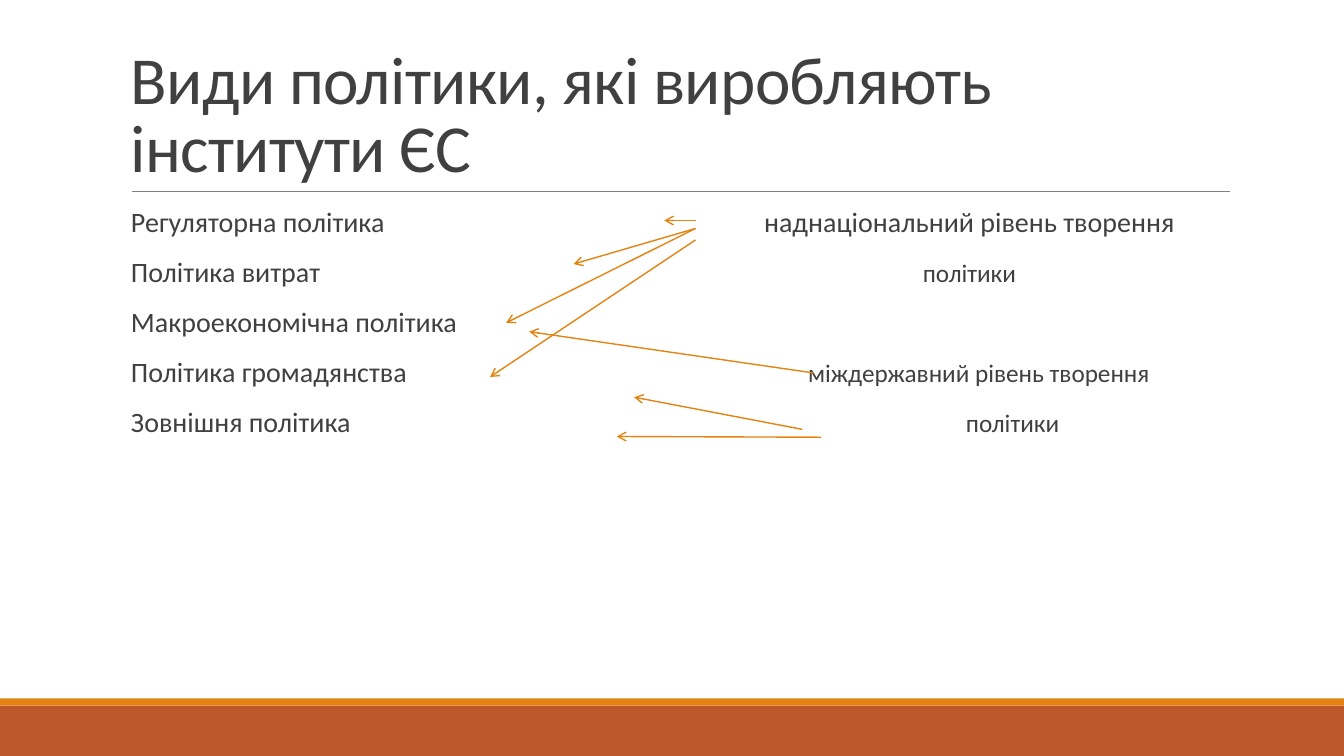
from dataclasses import dataclass

from lxml import etree
from pptx import Presentation
from pptx.dml.color import RGBColor
from pptx.enum import shapes, text
from pptx.oxml.ns import qn
from pptx.util import Pt


@dataclass(frozen=True)
class Theme:
    font: str = "Calibri"
    ink: str = "404040"
    accent: str = "E48312"
    footer: str = "BD582C"
    rule: str = "808080"
    title_size: float = 48
    body_size: float = 20
    small_size: float = 18


@dataclass(frozen=True)
class Band:
    top: float
    height: float
    color: str


@dataclass(frozen=True)
class PolicyRow:
    policy: str
    level: str = ""
    level_left: float = 0  # distance from the left edge of the body box
    level_size: float = 0


@dataclass(frozen=True)
class Line:
    start: tuple[float, float]
    end: tuple[float, float]
    color: str
    width: float = 1
    arrow: bool = True


THEME = Theme()
WIDTH, HEIGHT = 960, 540

BANDS = [Band(504, 36, THEME.footer), Band(498.9, 5.1, THEME.accent)]

ROWS = [
    PolicyRow("Регуляторна політика", "наднаціональний рівень творення", 452.2, THEME.body_size),
    PolicyRow("Політика витрат", "політики", 565.6, THEME.small_size),
    PolicyRow("Макроекономічна політика"),
    PolicyRow("Політика громадянства", "міждержавний рівень творення", 483.6, THEME.small_size),
    PolicyRow("Зовнішня політика", "політики", 596.4, THEME.small_size),
]

TITLE_RULE = Line((94.3, 136.8), (878.8, 136.8), THEME.rule, 0.5, arrow=False)
ARROWS = [
    Line(start, end, THEME.accent)
    for start, end in [
        # Supranational level
        ((496.8, 157.5), (474.5, 157.5)),
        ((496.8, 163.2), (409.7, 188.6)),
        ((496.8, 171.4), (350, 269.3)),
        ((496.8, 163.2), (361.5, 230.6)),
        # Intergovernmental level
        ((581, 266.4), (378, 236.9)),
        ((573.1, 306.7), (452.9, 283.7)),
        ((586.8, 312.3), (440.6, 311.8)),
    ]
]


def add_band(page, band: Band) -> None:
    shape = page.shapes.add_shape(
        shapes.MSO_SHAPE.RECTANGLE, Pt(0), Pt(band.top), Pt(WIDTH), Pt(band.height))
    shape.shadow.inherit = False
    shape.fill.solid()
    shape.fill.fore_color.rgb = RGBColor.from_string(band.color)
    shape.line.fill.background()


def add_line(page, line: Line) -> None:
    connector = page.shapes.add_connector(
        shapes.MSO_CONNECTOR.STRAIGHT, *map(Pt, line.start + line.end))
    connector.line.color.rgb = RGBColor.from_string(line.color)
    connector.line.width = Pt(line.width)
    properties = connector._element.spPr
    if line.arrow:
        etree.SubElement(properties.find(qn("a:ln")), qn("a:tailEnd"), type="arrow")
    etree.SubElement(properties, qn("a:effectLst"))


def add_box(page, left: float, top: float, width: float, height: float, inset: float):
    frame = page.shapes.add_textbox(Pt(left), Pt(top), Pt(width), Pt(height)).text_frame
    frame.word_wrap = True
    frame.margin_left = frame.margin_right = Pt(inset)
    return frame


def style_span(span, size: float) -> None:
    span.font.name = THEME.font
    span.font.size = Pt(size)
    span.font.color.rgb = RGBColor.from_string(THEME.ink)


def add_title(page, title: str) -> None:
    frame = add_box(page, 86.4, 22.3, 792, 114.5, 7.2)
    frame.vertical_anchor = text.MSO_ANCHOR.BOTTOM
    frame.text = title
    para = frame.paragraphs[0]
    para.line_spacing = 0.85
    span = para.runs[0]
    style_span(span, THEME.title_size)
    span.font._element.set("spc", "-50")


def fill_row(para, row: PolicyRow) -> None:
    para.line_spacing = 0.9
    para.space_before, para.space_after = Pt(12), Pt(2)
    para.text = row.policy
    style_span(para.runs[0], THEME.body_size)
    if row.level:
        # A tab stop sets the level apart from the policy
        tabs = etree.SubElement(para._p.get_or_add_pPr(), qn("a:tabLst"))
        etree.SubElement(tabs, qn("a:tab"), pos=str(Pt(row.level_left)), algn="l")
        span = para.add_run()
        span.text = "\t" + row.level
        style_span(span, row.level_size)


def add_rows(page, rows: list[PolicyRow]) -> None:
    frame = add_box(page, 93.6, 145.4, 784.8, 316.8, 0)
    for index, row in enumerate(rows):
        fill_row(frame.add_paragraph() if index else frame.paragraphs[0], row)


def main() -> None:
    deck = Presentation()
    deck.slide_width, deck.slide_height = Pt(WIDTH), Pt(HEIGHT)
    page = deck.slides.add_slide(deck.slide_layouts[6])

    # Footer bands and title rule
    for band in BANDS:
        add_band(page, band)
    add_line(page, TITLE_RULE)

    # Title and policies with their levels
    add_title(page, "Види політики, які виробляють інститути ЄС")
    add_rows(page, ROWS)

    # Arrows from levels to policies
    for arrow in ARROWS:
        add_line(page, arrow)

    deck.save("out.pptx")


if __name__ == "__main__":
    main()
